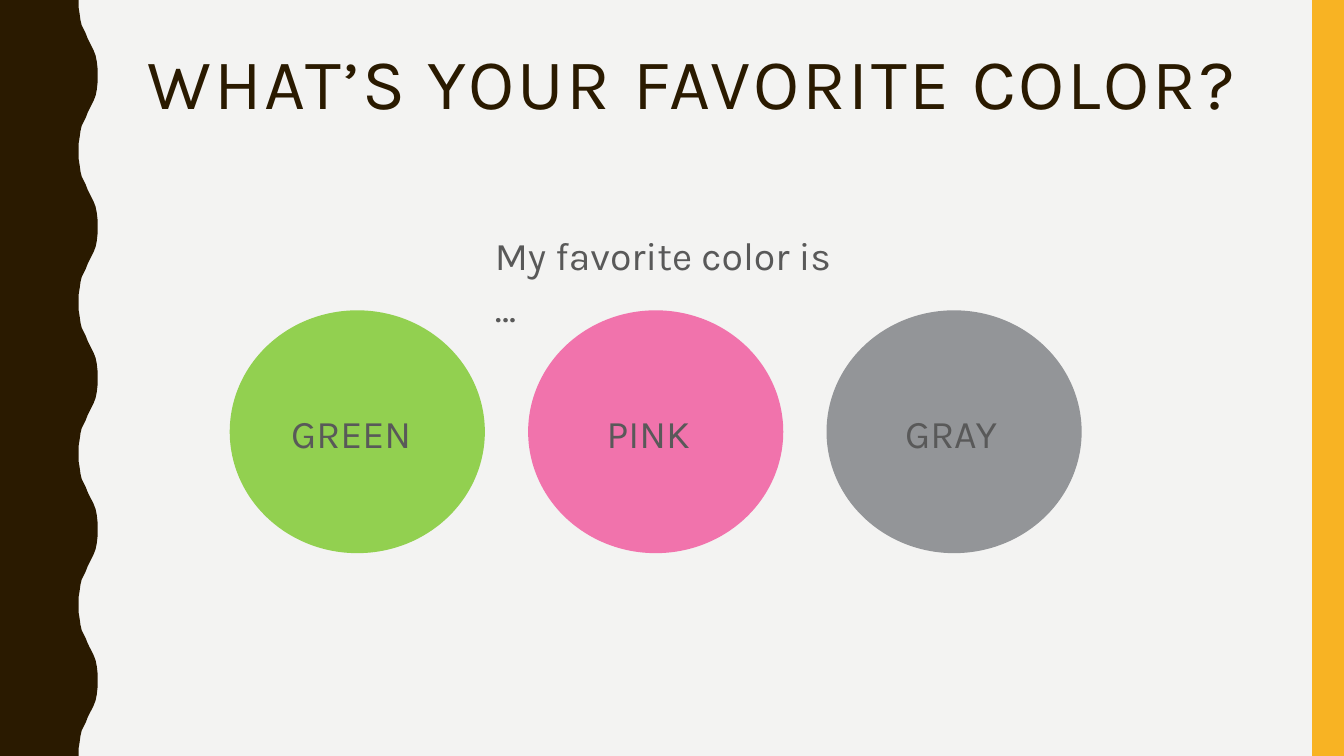
from dataclasses import dataclass

import pptx
import pptx.dml.color
import pptx.enum.shapes
import pptx.enum.text
import pptx.util

Cm = pptx.util.Cm
RGBColor = pptx.dml.color.RGBColor
Preset = pptx.enum.shapes.MSO_SHAPE

BACKGROUND = RGBColor(0xF3, 0xF3, 0xF2)
BROWN = RGBColor(0x2A, 0x1A, 0x00)
YELLOW = RGBColor(0xF8, 0xB3, 0x23)
TEXT_GRAY = RGBColor(0x59, 0x59, 0x59)
GREEN = RGBColor(0x92, 0xD0, 0x50)
PINK = RGBColor(0xF1, 0x73, 0xAC)
GRAY = RGBColor(0x93, 0x95, 0x98)

FONT = "Karla"
SLIDE_WIDTH, SLIDE_HEIGHT = 33.87, 19.05
WAVE_COUNT = 5
WAVE_LENGTH = SLIDE_HEIGHT / WAVE_COUNT
# Trough to crest of one wave, as (x, y) in centimetres
HALF_WAVE = [
    (1.98, 0), (1.98, 0.18), (2.01, 0.36), (2.03, 0.51), (2.06, 0.64),
    (2.11, 0.74), (2.16, 0.84), (2.21, 0.97), (2.26, 1.07), (2.31, 1.17),
    (2.36, 1.27), (2.41, 1.4), (2.44, 1.55), (2.46, 1.73), (2.46, 1.9),
]
CIRCLE_LEFT, CIRCLE_TOP, CIRCLE_PITCH = 5.79, 7.82, 7.52
CIRCLE_WIDTH, CIRCLE_HEIGHT = 6.43, 6.12


@dataclass(frozen=True)
class ColorChoice:
    label: str
    fill: RGBColor
    label_indent: float


CHOICES = [
    ColorChoice("GREEN", GREEN, 1.3),
    ColorChoice("PINK", PINK, 1.73),
    ColorChoice("GRAY", GRAY, 1.73),
]


def paint(shape, color: RGBColor) -> None:
    """Give the shape a flat fill with no outline or shadow."""
    shape.shadow.inherit = False
    shape.fill.solid()
    shape.fill.fore_color.rgb = color
    shape.line.fill.background()


def add_filled(slide, preset, left: float, top: float,
               width: float, height: float, color: RGBColor) -> None:
    shape = slide.shapes.add_shape(preset, Cm(left), Cm(top), Cm(width), Cm(height))
    paint(shape, color)


def add_wavy_edge(slide) -> None:
    wave = HALF_WAVE + [(x, WAVE_LENGTH - y) for x, y in reversed(HALF_WAVE)]
    outline = [(x, y + index * WAVE_LENGTH)
               for index in range(WAVE_COUNT) for x, y in wave]
    outline.append((0, SLIDE_HEIGHT))
    builder = slide.shapes.build_freeform(0, 0)
    builder.add_line_segments([(Cm(x), Cm(y)) for x, y in outline], close=True)
    paint(builder.convert_to_shape(), BROWN)


def add_text(slide, text: str, left: float, top: float, width: float, height: float,
             size: float = 28, color: RGBColor = TEXT_GRAY,
             line_spacing: float = 1.1, tracking: int = 0) -> None:
    """Add a top-anchored line of text; tracking is in hundredths of a point."""
    box = slide.shapes.add_textbox(Cm(left), Cm(top), Cm(width), Cm(height))
    frame = box.text_frame
    frame.word_wrap = True
    frame.vertical_anchor = pptx.enum.text.MSO_ANCHOR.TOP
    frame.text = text
    paragraph = frame.paragraphs[0]
    paragraph.line_spacing = line_spacing
    run = paragraph.runs[0]
    run.font.name = FONT
    run.font.size = pptx.util.Pt(size)
    run.font.color.rgb = color
    if tracking:
        run.font._element.set("spc", str(tracking))


def main() -> None:
    presentation = pptx.Presentation()
    presentation.slide_width = Cm(SLIDE_WIDTH)
    presentation.slide_height = Cm(SLIDE_HEIGHT)
    slide = presentation.slides.add_slide(presentation.slide_layouts[6])
    slide.background.fill.solid()
    slide.background.fill.fore_color.rgb = BACKGROUND

    add_wavy_edge(slide)
    add_filled(slide, Preset.RECTANGLE, 33.07, 0, 0.8, SLIDE_HEIGHT, YELLOW)
    add_text(slide, "WHAT’S YOUR FAVORITE COLOR?", 3.48, 1.07, 28.27, 4.14,
             size=51, color=BROWN, line_spacing=0.9, tracking=200)
    add_text(slide, "My favorite color is …", 12.22, 5.59, 9.4, 1.65)

    for index, choice in enumerate(CHOICES):
        left = CIRCLE_LEFT + index * CIRCLE_PITCH
        add_filled(slide, Preset.OVAL, left, CIRCLE_TOP,
                   CIRCLE_WIDTH, CIRCLE_HEIGHT, choice.fill)
        add_text(slide, choice.label, left + choice.label_indent, 10.06, 4.72, 1.65)

    presentation.save("out.pptx")


if __name__ == "__main__":
    main()
